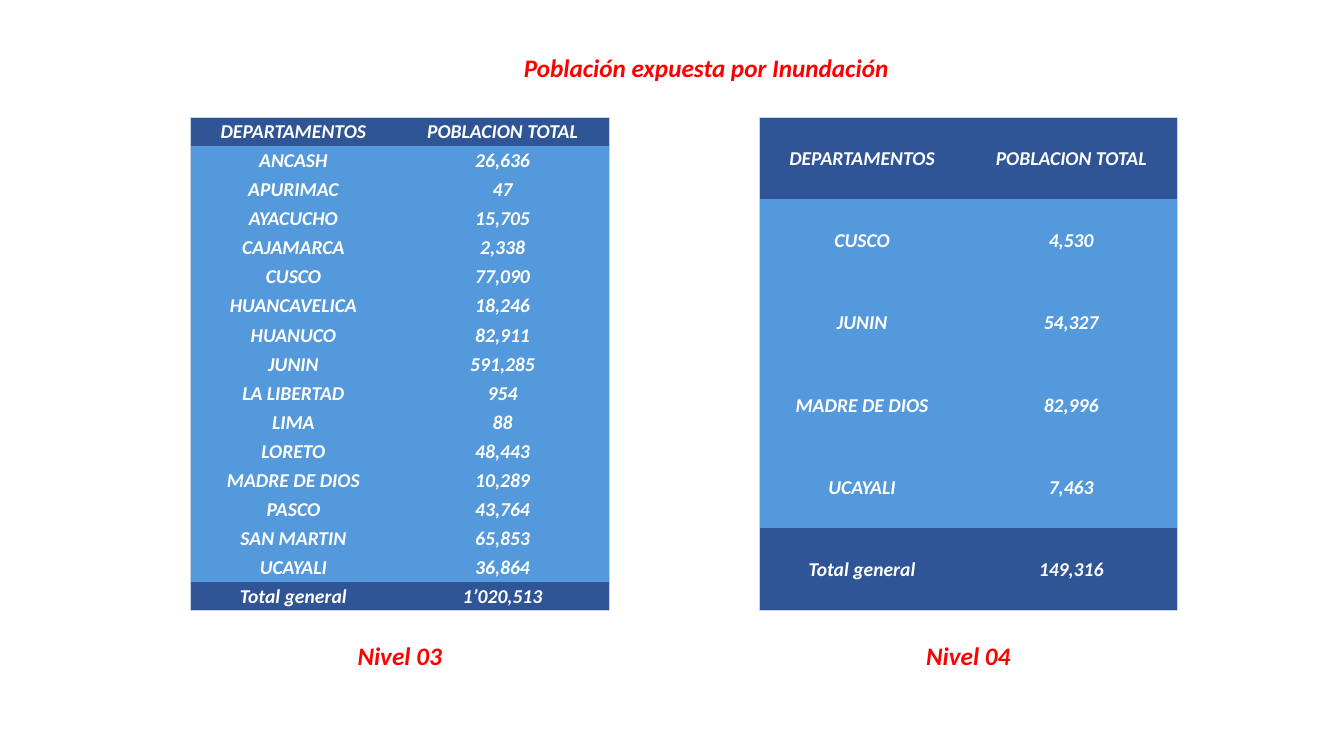
"""Build the slide on population exposed to flooding, by department and level."""
from dataclasses import dataclass

from lxml.etree import SubElement
from pptx import Presentation
from pptx.dml.color import RGBColor
from pptx.enum.text import MSO_ANCHOR as Anchor, MSO_AUTO_SIZE as AutoSize, PP_ALIGN as Align
from pptx.oxml.ns import qn
from pptx.util import Inches, Pt

TITLE = "Población expuesta por Inundación"
HEADER = ("DEPARTAMENTOS", "POBLACION TOTAL")
LEVELS = [
    {
        "caption": "Nivel 03",
        "left": 1.89,
        "departments": [
            ("ANCASH", "26,636"),
            ("APURIMAC", "47"),
            ("AYACUCHO", "15,705"),
            ("CAJAMARCA", "2,338"),
            ("CUSCO", "77,090"),
            ("HUANCAVELICA", "18,246"),
            ("HUANUCO", "82,911"),
            ("JUNIN", "591,285"),
            ("LA LIBERTAD", "954"),
            ("LIMA", "88"),
            ("LORETO", "48,443"),
            ("MADRE DE DIOS", "10,289"),
            ("PASCO", "43,764"),
            ("SAN MARTIN", "65,853"),
            ("UCAYALI", "36,864"),
        ],
        "total": ("Total general", "1’020,513"),
    },
    {
        "caption": "Nivel 04",
        "left": 7.53,
        "departments": [
            ("CUSCO", "4,530"),
            ("JUNIN", "54,327"),
            ("MADRE DE DIOS", "82,996"),
            ("UCAYALI", "7,463"),
        ],
        "total": ("Total general", "149,316"),
    },
]

TABLE_TOP, TABLE_HEIGHT = 1.16, 4.9
COLUMN_WIDTHS = (2.04, 2.11)
CAPTION_TOP, CAPTION_WIDTH, CAPTION_HEIGHT = 6.3, 1.1, 0.4


@dataclass(frozen=True)
class Theme:
    font: str = "Calibri"
    heading: str = "FF0000"
    cell_text: str = "FFFFFF"
    band: str = "2F5597"
    body: str = "5399DB"
    border: str = "C4D5EB"
    heading_size: float = 18
    cell_size: float = 14
    border_width: float = 0.5


THEME = Theme()


def write_text(frame, text, *, size, color, wrap=True):
    frame.word_wrap = wrap
    frame.vertical_anchor = Anchor.MIDDLE
    paragraph = frame.paragraphs[0]
    paragraph.alignment = Align.CENTER
    run = paragraph.add_run()
    run.text = text
    font = run.font
    font.name, font.size = THEME.font, Pt(size)
    font.bold = font.italic = True
    font.color.rgb = RGBColor.from_string(color)


def write_heading(shape, text, box, wrap=True):
    shape.left, shape.top, shape.width, shape.height = map(Inches, box)
    write_text(shape.text_frame, text, size=THEME.heading_size, color=THEME.heading, wrap=wrap)
    shape.text_frame.auto_size = AutoSize.SHAPE_TO_FIT_TEXT


def set_borders(cell, outer_sides):
    properties = cell._tc.get_or_add_tcPr()
    for position, side in enumerate("LRTB"):
        line = SubElement(properties, qn(f"a:ln{side}"), w=str(Pt(THEME.border_width)))
        if side in outer_sides:
            fill = SubElement(line, qn("a:solidFill"))
            SubElement(fill, qn("a:srgbClr"), val=THEME.border)
        else:
            SubElement(line, qn("a:noFill"))
        properties.insert(position, line)


def add_level_table(slide, level):
    rows = [HEADER, *level["departments"], level["total"]]
    last = len(rows) - 1
    box = (level["left"], TABLE_TOP, sum(COLUMN_WIDTHS), TABLE_HEIGHT)
    table = slide.shapes.add_table(len(rows), len(HEADER), *map(Inches, box)).table
    table.first_row = table.horz_banding = False
    for column, width in zip(table.columns, COLUMN_WIDTHS):
        column.width = Inches(width)
    for row_index, values in enumerate(rows):
        table.rows[row_index].height = Inches(TABLE_HEIGHT / len(rows))
        edge = {0: "T", last: "B"}.get(row_index, "")
        for column_index, value in enumerate(values):
            cell = table.cell(row_index, column_index)
            cell.margin_left = cell.margin_right = cell.margin_top = Inches(0.01)
            cell.margin_bottom = 0
            cell.vertical_anchor = Anchor.MIDDLE
            cell.fill.solid()
            cell.fill.fore_color.rgb = RGBColor.from_string(THEME.band if edge else THEME.body)
            write_text(cell.text_frame, value, size=THEME.cell_size, color=THEME.cell_text)
            set_borders(cell, edge + "LR"[column_index])


def add_caption(slide, level):
    left = level["left"] + (sum(COLUMN_WIDTHS) - CAPTION_WIDTH) / 2
    box = (left, CAPTION_TOP, CAPTION_WIDTH, CAPTION_HEIGHT)
    write_heading(slide.shapes.add_textbox(0, 0, 0, 0), level["caption"], box)


def main():
    presentation = Presentation()
    presentation.slide_width, presentation.slide_height = Inches(13.33), Inches(7.5)
    slide = presentation.slides.add_slide(presentation.slide_layouts.get_by_name("Title Only"))
    write_heading(slide.shapes.title, TITLE, (5.08, 0.47, 3.85, 0.4), wrap=False)
    for level in LEVELS:
        add_level_table(slide, level)
        add_caption(slide, level)
    presentation.save("out.pptx")


if __name__ == "__main__":
    main()
